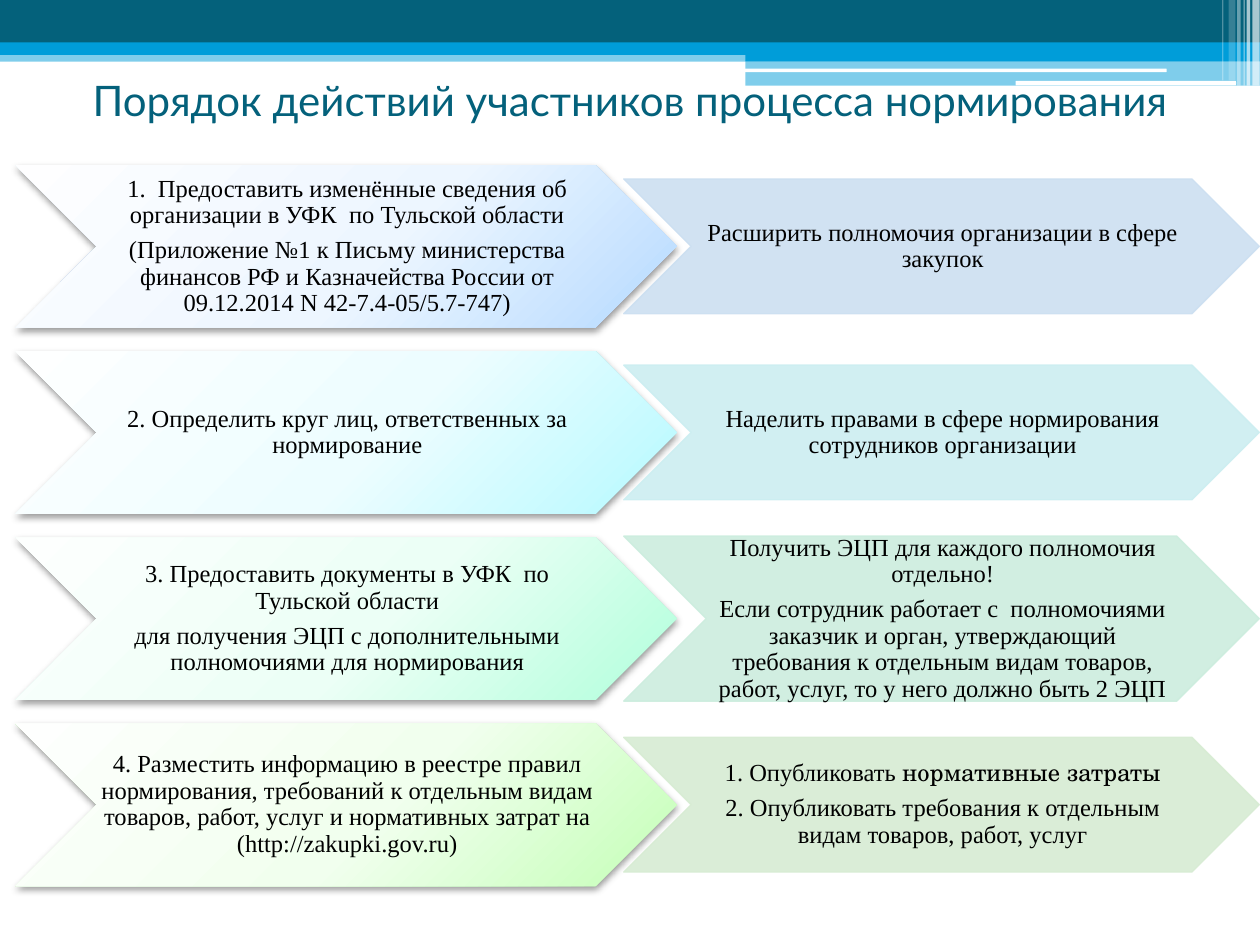
from pptx import Presentation
from pptx.dml.color import RGBColor
from pptx.enum.shapes import MSO_SHAPE
from pptx.enum.text import MSO_ANCHOR, PP_ALIGN
from pptx.oxml import parse_xml
from pptx.oxml.ns import nsdecls
from pptx.util import Pt

RECT, ROUND = MSO_SHAPE.RECTANGLE, MSO_SHAPE.ROUNDED_RECTANGLE
CHEVRON = MSO_SHAPE.CHEVRON
MIDDLE, CENTER = MSO_ANCHOR.MIDDLE, PP_ALIGN.CENTER

THEME = {
    "dark": "04617B", "blue": "009DD9", "white": "FFFFFF", "black": "000000",
    "head": "Lato", "body": "Times New Roman", "accent": "TeX Gyre Schola",
    "head_size": 24, "body_size": 14,
}

TITLE = "Порядок действий участников процесса нормирования"

# Each step: left paragraphs, right paragraphs, gradient, right colour, right height.
# A paragraph is a list of (text, font role) runs.
STEPS = [
    ([[("1.  Предоставить изменённые сведения об организации в УФК  по Тульской области", "body")],
      [("(Приложение №1 к Письму министерства финансов РФ и Казначейства России "
        "от 09.12.2014 N 42-7.4-05/5.7-747)", "body")]],
     [[("Расширить полномочия организации в сфере закупок", "body")]],
     ("FEFEFF", "EDF6FF", "B5DAFF"), "CCDFF1", 77),
    ([[("2. Определить круг лиц, ответственных за нормирование", "body")]],
     [[("Наделить правами в сфере нормирования сотрудников организации", "body")]],
     ("FEFFFF", "EDFDFF", "B5F9FF"), "CCEEF1", 77),
    ([[("3. Предоставить документы в УФК  по Тульской области", "body")],
      [("для получения ЭЦП с дополнительными полномочиями для нормирования", "body")]],
     [[("Получить ЭЦП для каждого полномочия отдельно!", "body")],
      [("Если сотрудник работает с  полномочиями заказчик и орган, утверждающий "
        "требования к отдельным видам товаров, работ, услуг, "
        "то у него должно быть 2 ЭЦП", "body")]],
     ("FDFFFE", "ECFFF6", "B1FFDB"), "CCEDDE", 94.3),
    ([[("4. Разместить информацию в реестре правил нормирования, требований к отдельным "
        "видам товаров, работ, услуг и нормативных затрат на (http://zakupki.gov.ru)", "body")]],
     [[("1. Опубликовать ", "body"), ("нормативные затраты", "accent")],
      [("2. Опубликовать требования к отдельным видам товаров, работ, услуг", "body")]],
     ("FEFFFE", "F1FFEE", "C4FFB7"), "D7ECD3", 77),
]

# Header: left, top, width, height, colour, opacity in percent
BARS = [
    (0, 28.8, 720, 6.5, "blue", 50),
    (0, 0, 720, 24.5, "dark", 100),
    (0, 24.2, 720, 7.2, "blue", 100),
    (426, 28, 294, 7, "blue", 100),
    (426, 34.6, 294, 14.4, "blue", 50),
]
PILLS = [
    (425.5, 39.2, 241.2, 2, "white", 100),
    (580.3, 46.2, 126, 2.6, "white", 100),
]
# Vertical stripes: left, width, height, opacity
STRIPES = [
    (715.7, 4.1, 49, 65), (712.4, 2, 49, 65), (710.6, 0.7, 49, 60),
    (707, 2, 49, 40), (702, 4, 46, 20), (698.4, 0.7, 46, 30),
]

LEFT, LEFT_W, LEFT_H = 8.8, 378, 92.9
RIGHT, RIGHT_W = 356.4, 363.2
FIRST, PITCH = 140.8, 106.35  # centre of the first row, row to row

FRAME = {"word_wrap": True, "vertical_anchor": MIDDLE}
TIGHT = {"margin_left": Pt(1.4), "margin_top": Pt(0.7),
         "margin_right": 0, "margin_bottom": Pt(0.7)}
PARA = {"alignment": CENTER, "line_spacing": 0.9, "space_after": Pt(4.9)}


def apply(obj, values):
    for name, value in values.items():
        setattr(obj, name, value)


def rgb(code):
    return RGBColor.from_string(code)


def add_xml(parent, xml, at=None):
    node = parse_xml(xml)
    parent.insert(len(parent) if at is None else at, node)


def fade(fill, alpha):
    """Set the opacity, in percent, of a solid fill."""
    if alpha < 100:
        color = fill._xPr.find(".//{*}srgbClr")
        add_xml(color, f'<a:alpha {nsdecls("a")} val="{alpha * 1000}"/>')


def paint(fill, color, alpha):
    fill.solid()
    fill.fore_color.rgb = rgb(color)
    fade(fill, alpha)


def add_form(slide, kind, box):
    form = slide.shapes.add_shape(kind, *map(Pt, box))
    form.shadow.inherit = False
    form.line.fill.background()
    return form


def add_bar(slide, kind, box, color, alpha):
    paint(add_form(slide, kind, box).fill, THEME[color], alpha)


def write(frame, paras, size, color, para_format):
    for i, runs in enumerate(paras):
        para = frame.add_paragraph() if i else frame.paragraphs[0]
        apply(para, para_format)
        for text, role in runs:
            run = para.add_run()
            run.text = text
            apply(run.font, {"name": THEME[role], "size": Pt(THEME[size])})
            run.font.color.rgb = rgb(THEME[color])


def add_arrow(slide, left, mid, width, height, paras):
    form = add_form(slide, CHEVRON, (left, mid - height / 2, width, height))
    apply(form.text_frame, FRAME | TIGHT)
    write(form.text_frame, paras, "body_size", "black", PARA)
    return form


def shade(form, colors):
    """Give a radial gradient from the top left and a soft shadow below."""
    props = form._element.spPr
    stops = "".join(f'<a:gs pos="{pos}"><a:srgbClr val="{color}"/></a:gs>'
                    for pos, color in zip((0, 55000, 100000), colors))
    add_xml(props, f'<a:gradFill {nsdecls("a")} rotWithShape="1"><a:gsLst>{stops}</a:gsLst>'
            '<a:path path="circle"><a:fillToRect l="-40000" t="-90000" r="140000" b="190000"/>'
            '</a:path></a:gradFill>', 2)
    add_xml(props.find("{*}effectLst"),
            f'<a:outerShdw {nsdecls("a")} blurRad="{Pt(4.1)}" dist="{Pt(2)}" dir="5400000" '
            f'rotWithShape="0"><a:srgbClr val="{THEME["black"]}"><a:alpha val="40000"/>'
            '</a:srgbClr></a:outerShdw>')


def main():
    deck = Presentation()
    apply(deck, {"slide_width": Pt(720), "slide_height": Pt(540)})
    slide = deck.slides.add_slide(deck.slide_layouts[6])

    for kind, group in ((RECT, BARS), (ROUND, PILLS)):
        for *box, color, alpha in group:
            add_bar(slide, kind, box, color, alpha)
    for left, width, height, alpha in STRIPES:
        add_bar(slide, RECT, (left, 0, width, height), "white", alpha)

    title = slide.shapes.add_textbox(*map(Pt, (0, 31.7, 720, 51)))
    apply(title.text_frame, FRAME)
    write(title.text_frame, [[(TITLE, "head")]], "head_size", "dark", {"alignment": CENTER})

    for i, (task, result, colors, tint, height) in enumerate(STEPS):
        mid = FIRST + i * PITCH
        shade(add_arrow(slide, LEFT, mid, LEFT_W, LEFT_H, task), colors)
        arrow = add_arrow(slide, RIGHT, mid, RIGHT_W, height, result)
        paint(arrow.fill, tint, 90)
        paint(arrow.line.fill, tint, 90)
        arrow.line.width = Pt(0.75)

    deck.save("out.pptx")


if __name__ == "__main__":
    main()
